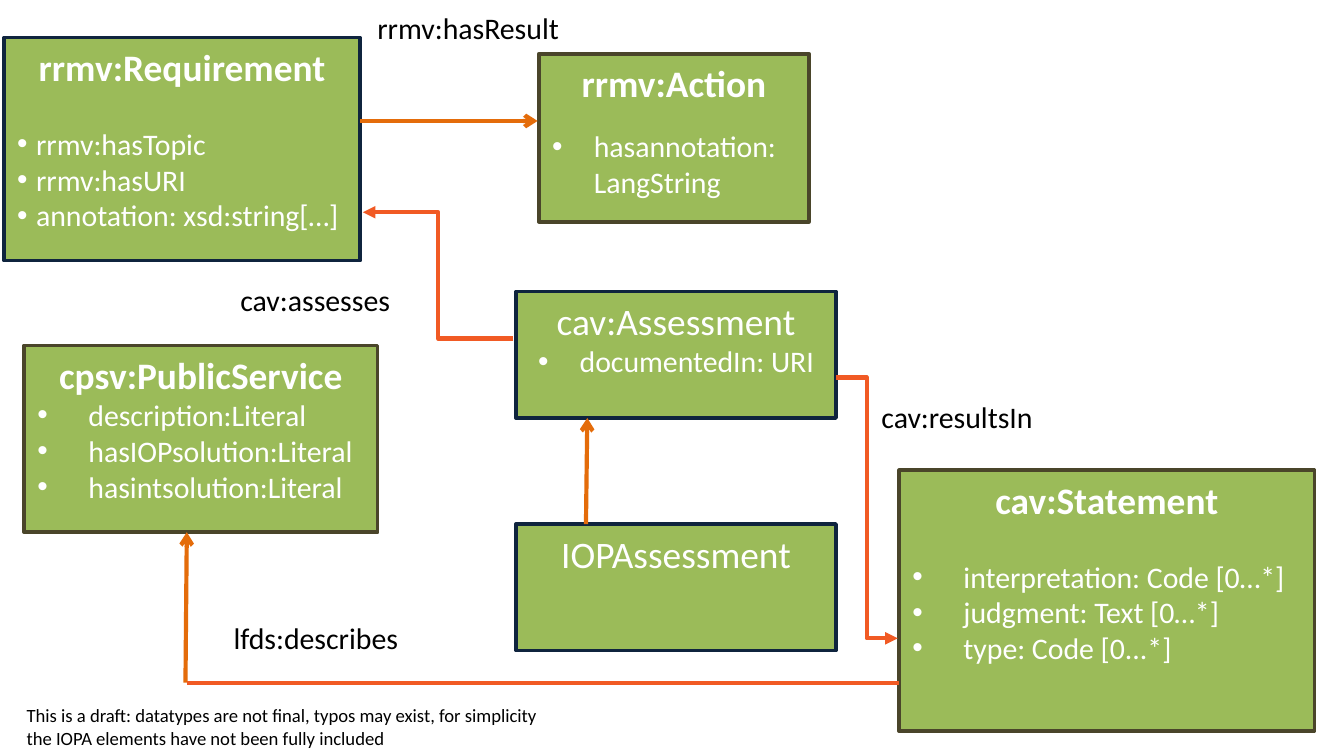
from typing import NamedTuple

from lxml.etree import SubElement
from pptx import Presentation
from pptx.dml.color import RGBColor
from pptx.enum.shapes import MSO_CONNECTOR, MSO_SHAPE
from pptx.enum.text import MSO_ANCHOR, MSO_AUTO_SIZE, PP_ALIGN
from pptx.oxml.ns import qn
from pptx.util import Pt

SCALE = 9144
NAVY, BROWN, GREEN = "0F243E", "4A452A", "9BBB59"
ORANGE, RED = "E46C0A", "F15A24"
WHITE, BLACK = "FFFFFF", "000000"


class Box(NamedTuple):
    place: tuple[int, int, int, int]
    edge: str
    title: str
    items: tuple[str, ...] = ()
    bold: bool = True
    gap: float = 0
    indent: int = 38
    align: PP_ALIGN = PP_ALIGN.LEFT


class Label(NamedTuple):
    place: tuple[int, int, int, int]
    text: str
    size: int = 16


class Link(NamedTuple):
    ends: tuple[int, int, int, int]
    color: str
    head: str = ""
    kind: MSO_CONNECTOR = MSO_CONNECTOR.STRAIGHT


BOXES = (
    Box((3, 28, 265, 166), NAVY, "rrmv:Requirement",
        ("rrmv:hasTopic", "rrmv:hasURI", "annotation: xsd:string[…]"),
        gap=19.5, indent=14),
    Box((401, 40, 201, 125), BROWN, "rrmv:Action",
        ("hasannotation: LangString",), gap=12.2, indent=31),
    Box((18, 257, 263, 139), BROWN, "cpsv:PublicService",
        ("description:Literal", "hasIOPsolution:Literal",
         "hasintsolution:Literal")),
    Box((384, 217, 238, 94), NAVY, "cav:Assessment", ("documentedIn: URI",),
        bold=False, indent=31, align=PP_ALIGN.CENTER),
    Box((669, 350, 309, 194), BROWN, "cav:Statement",
        ("interpretation: Code [0…*]", "judgment: Text [0…*]",
         "type: Code [0...*]"), gap=19.5),
    Box((384, 390, 238, 94), NAVY, "IOPAssessment", bold=False),
)
LABELS = (
    Label((271, 2, 167, 37), "rrmv:hasResult"),
    Label((646, 292, 168, 37), "cav:resultsIn"),
    Label((169, 205, 162, 37), "cav:assesses"),
    Label((164, 456, 162, 37), "lfds:describes"),
    Label((10, 519, 406, 44),
          "This is a draft: datatypes are not final, typos may exist, for "
          "simplicity the IOPA elements have not been fully included", 10),
)
LINKS = (
    Link((268, 90, 400, 90), ORANGE, "arrow"),
    Link((622, 281, 668, 475), RED, "triangle", MSO_CONNECTOR.ELBOW),
    Link((382, 252, 270, 158), RED, "triangle", MSO_CONNECTOR.ELBOW),
    Link((436, 390, 437, 311), ORANGE, "arrow"),
    Link((138, 508, 139, 396), ORANGE, "arrow"),
    Link((139, 508, 669, 508), RED),
)


def px(*values: int) -> list[int]:
    """Turn px lengths into EMU."""
    return [value * SCALE for value in values]


def rgb(color: str) -> RGBColor:
    """Turn a hex string into a colour."""
    return RGBColor.from_string(color)


def style(para, size: int, color: str, bold: bool = False) -> None:
    """Set the font of a paragraph."""
    font = para.font
    font.name, font.size, font.bold = "Calibri", Pt(size), bold
    font.color.rgb = rgb(color)


def bullet(para, indent: int) -> None:
    """Give a paragraph a hanging bullet."""
    props = para._p.get_or_add_pPr()
    width = indent * SCALE
    props.set("marL", str(width))
    props.set("indent", str(-width))
    SubElement(props, qn("a:buFont"), typeface="Arial")
    SubElement(props, qn("a:buChar"), char="•")


def draw_box(shapes, box: Box) -> None:
    """Draw a class box with its title and items."""
    shape = shapes.add_shape(MSO_SHAPE.RECTANGLE, *px(*box.place))
    shape.shadow.inherit = False
    shape.fill.solid()
    shape.fill.fore_color.rgb = rgb(GREEN)
    shape.line.color.rgb = rgb(box.edge)
    shape.line.width = Pt(2)
    frame = shape.text_frame
    frame.word_wrap = True
    frame.vertical_anchor = MSO_ANCHOR.TOP
    title = frame.paragraphs[0]
    title.text = box.title
    title.alignment = PP_ALIGN.CENTER
    title.space_after = Pt(box.gap)
    style(title, 20, WHITE, box.bold)
    for item in box.items:
        para = frame.add_paragraph()
        para.text = item
        para.alignment = box.align
        bullet(para, box.indent)
        style(para, 16, WHITE)


def draw_label(shapes, label: Label) -> None:
    """Draw a plain text label."""
    frame = shapes.add_textbox(*px(*label.place)).text_frame
    frame.word_wrap = True
    frame.auto_size = MSO_AUTO_SIZE.SHAPE_TO_FIT_TEXT
    para = frame.paragraphs[0]
    para.text = label.text
    style(para, label.size, BLACK)


def draw_link(shapes, link: Link) -> None:
    """Draw a connector with an optional arrowhead."""
    wire = shapes.add_connector(link.kind, *px(*link.ends))
    wire.line.color.rgb = rgb(link.color)
    wire.line.width = Pt(2.25)
    if link.head:
        SubElement(wire.line._get_or_add_ln(), qn("a:tailEnd"), type=link.head)
    SubElement(wire._element.spPr, qn("a:effectLst"))


def main() -> None:
    """Build and save the slide."""
    deck = Presentation()
    deck.slide_width, deck.slide_height = Pt(720), Pt(405)
    shapes = deck.slides.add_slide(deck.slide_layouts[6]).shapes
    for box in BOXES:
        draw_box(shapes, box)
    for link in LINKS:
        draw_link(shapes, link)
    for label in LABELS:
        draw_label(shapes, label)
    deck.save("out.pptx")


if __name__ == "__main__":
    main()
